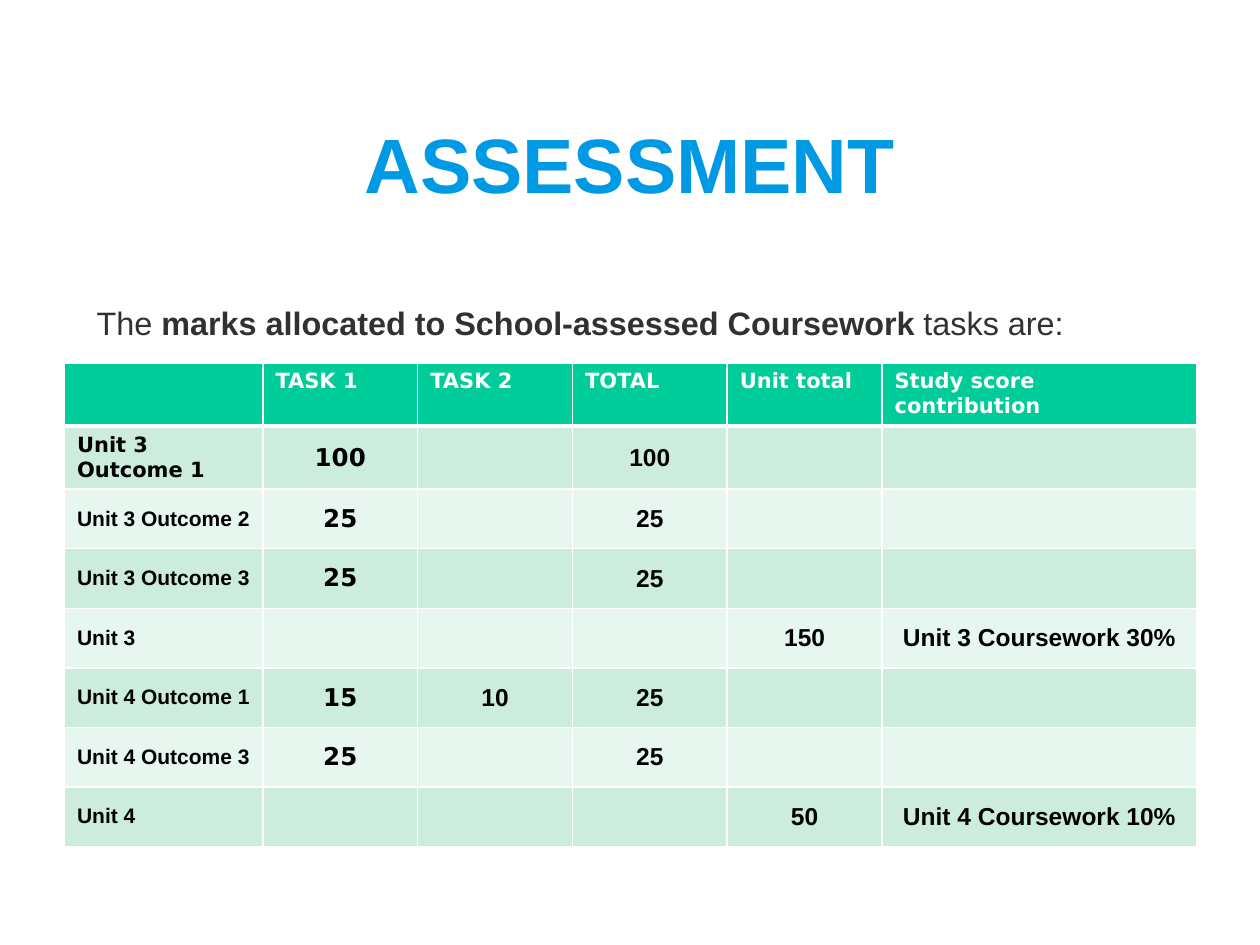
from lxml import etree
from pptx import Presentation
from pptx.dml.color import RGBColor
from pptx.enum import text
from pptx.oxml.ns import qn
from pptx.util import Cm, Pt


def style(font, **values):
    """Set font attributes; size is in points and color is a hex string."""
    font.color.rgb = RGBColor.from_string(values.pop("color"))
    values["size"] = Pt(values["size"])
    for name, value in values.items():
        setattr(font, name, value)


def add_border(cell, side, width):
    ln = etree.SubElement(cell._tc.get_or_add_tcPr(), qn(f"a:ln{side}"), w=str(Pt(width)))
    fill = etree.SubElement(ln, qn("a:solidFill"))
    etree.SubElement(fill, qn("a:srgbClr"), val="FFFFFF")


prs = Presentation()
prs.slide_width, prs.slide_height = Cm(25.4), Cm(19.05)
s = prs.slides.add_slide(prs.slide_layouts[6])

# Title
tf = s.shapes.add_textbox(Cm(1.9), Cm(1.7), Cm(21.6), Cm(3.18)).text_frame
tf.word_wrap = True
tf.vertical_anchor = text.MSO_ANCHOR.MIDDLE
p = tf.paragraphs[0]
p.alignment = text.PP_ALIGN.CENTER
r = p.add_run()
r.text = "ASSESSMENT"
style(r.font, name="Arial", size=44, bold=True, color="0099E3")

# Introduction
tf = s.shapes.add_textbox(Cm(1.7), Cm(4.72), Cm(22), Cm(2)).text_frame
tf.word_wrap = True
tf.margin_top = Cm(1.4)
p = tf.paragraphs[0]
for words, bold in [
    ("The ", False),
    ("marks allocated to School-assessed Coursework ", True),
    ("tasks are:", False),
]:
    r = p.add_run()
    r.text = words
    style(r.font, name="Arial", size=18.5, bold=bold, color="303132")

# Marks table
rows = [
    ["", "TASK 1", "TASK 2", "TOTAL", "Unit total", "Study score contribution"],
    ["Unit 3 Outcome 1", "100", "", "100", "", ""],
    ["Unit 3 Outcome 2", "25", "", "25", "", ""],
    ["Unit 3 Outcome 3", "25", "", "25", "", ""],
    ["Unit 3", "", "", "", "150", "Unit 3 Coursework 30%"],
    ["Unit 4 Outcome 1", "15", "10", "25", "", ""],
    ["Unit 4 Outcome 3", "25", "", "25", "", ""],
    ["Unit 4", "", "", "", "50", "Unit 4 Coursework 10%"],
]
widths = [4, 3.12, 3.12, 3.12, 3.12, 6.35]
heights = [1] + [1.2] * 7
table = s.shapes.add_table(
    len(rows), len(widths), Cm(1.3), Cm(7.32), Cm(sum(widths)), Cm(sum(heights))
).table
for column, width in zip(table.columns, widths):
    column.width = Cm(width)
for row, height in zip(table.rows, heights):
    row.height = Cm(height)

for i, row in enumerate(rows):
    header = i == 0
    band = "00CC99" if header else "CCECDE" if i % 2 else "E7F6EF"
    for j, words in enumerate(row):
        cell = table.cell(i, j)
        for side in "LRTB":
            thick = (i, side) in [(0, "B"), (1, "T")]
            add_border(cell, side, 3 if thick else 1)
        cell.fill.solid()
        cell.fill.fore_color.rgb = RGBColor.from_string(band)
        if not words:
            continue
        p = cell.text_frame.paragraphs[0]
        if not header:
            cell.vertical_anchor = text.MSO_ANCHOR.MIDDLE
            p.alignment = text.PP_ALIGN.CENTER if j else text.PP_ALIGN.LEFT
        r = p.add_run()
        r.text = words
        style(
            r.font,
            name="DejaVu Sans" if header or j == 1 or (i, j) == (1, 0) else "Arial",
            size=12 if header or j == 0 else 14,
            bold=True,
            color="FFFFFF" if header else "000000",
        )

prs.save("out.pptx")
